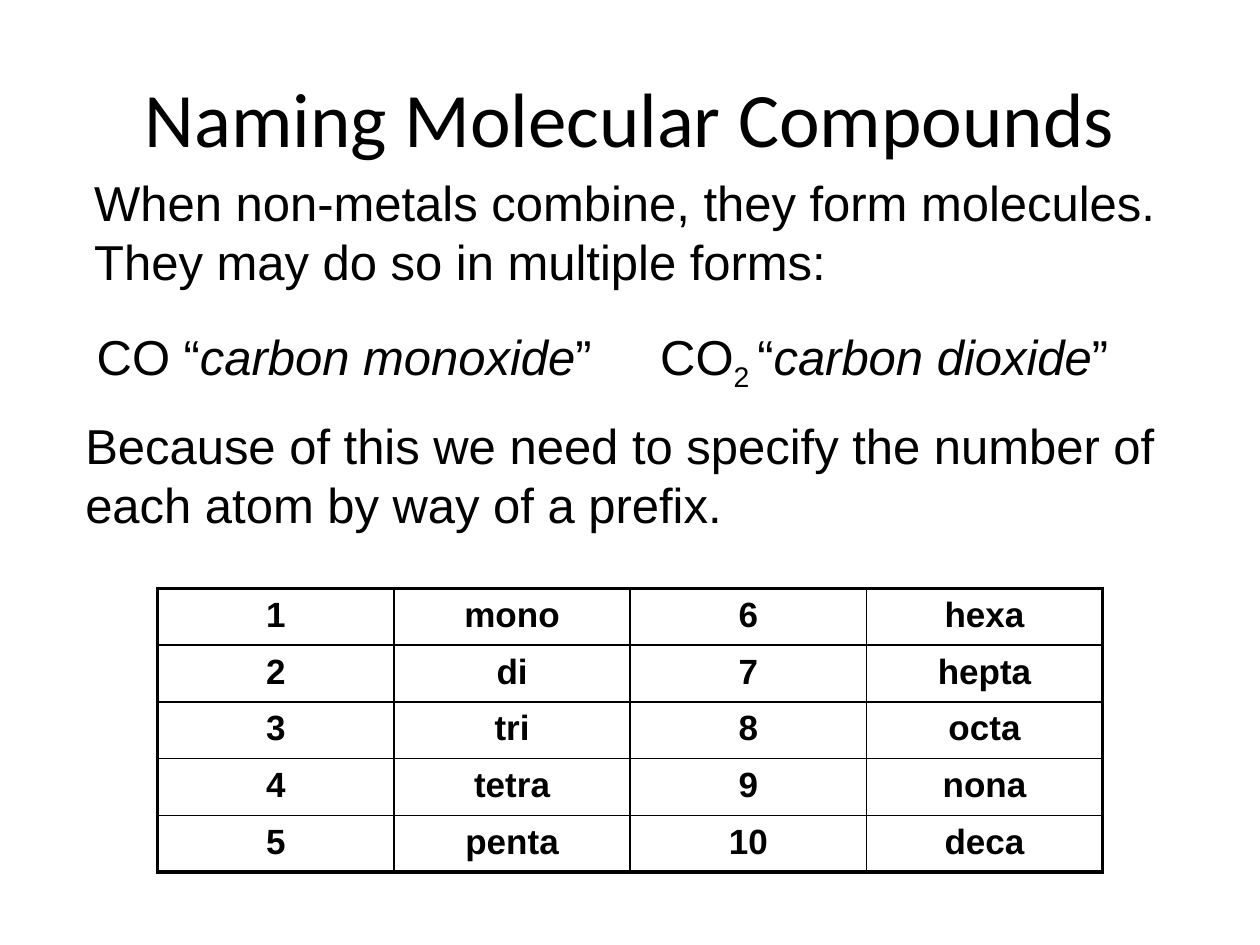
import pptx
import pptx.dml.color
import pptx.enum.text
import pptx.oxml.ns
import pptx.util
from lxml import etree
from pptx.util import Cm

BLACK = "000000"
CENTER = pptx.enum.text.PP_ALIGN.CENTER
MIDDLE = pptx.enum.text.MSO_ANCHOR.MIDDLE


def color(hex_string):
    return pptx.dml.color.RGBColor.from_string(hex_string)


def write_text(frame, paragraphs, size=28, font="Arial", bold=False, alignment=None):
    """Fill a text frame; each paragraph is a list of (text, style) runs."""
    for index, runs in enumerate(paragraphs):
        paragraph = frame.add_paragraph() if index else frame.paragraphs[0]
        paragraph.alignment = alignment
        for text, style in runs:
            run = paragraph.add_run()
            run.text = text
            run.font.size = pptx.util.Pt(size)
            run.font.name = font
            run.font.bold = bold
            run.font.italic = style == "italic"
            run.font.color.rgb = color(BLACK)
            if style == "subscript":
                run.font._element.set("baseline", "-25000")


presentation = pptx.Presentation()
presentation.slide_width = Cm(25.4)
presentation.slide_height = Cm(19.05)
slide = presentation.slides.add_slide(presentation.slide_layouts[6])

# Body text: left, top, width, height, wrap, paragraphs
text_boxes = [
    (1.65, 3.35, 21.97, 2.62, False, [
        [("When non-metals combine, they form molecules.", "")],
        [("They may do so in multiple forms:", "")],
    ]),
    (1.7, 6.45, 10.52, 1.45, False, [
        [("CO “", ""), ("carbon monoxide", "italic"), ("”", "")],
    ]),
    (13.06, 6.45, 9.65, 1.45, False, [
        [("CO", ""), ("2 ", "subscript"), ("“", ""), ("carbon dioxide", "italic"), ("”", "")],
    ]),
    (1.47, 8.26, 22.48, 2.62, True, [
        [("Because of this we need to specify the number of each atom by way of a prefix.", "")],
    ]),
]
for left, top, width, height, wrap, paragraphs in text_boxes:
    shape = slide.shapes.add_textbox(Cm(left), Cm(top), Cm(width), Cm(height))
    shape.text_frame.word_wrap = wrap
    shape.text_frame.auto_size = pptx.enum.text.MSO_AUTO_SIZE.SHAPE_TO_FIT_TEXT
    write_text(shape.text_frame, paragraphs)

# Prefix table: thick outer frame, thin inner lines
prefix_rows = [
    ("1", "mono", "6", "hexa"),
    ("2", "di", "7", "hepta"),
    ("3", "tri", "8", "octa"),
    ("4", "tetra", "9", "nona"),
    ("5", "penta", "10", "deca"),
]
last_row = len(prefix_rows) - 1
last_column = len(prefix_rows[0]) - 1
table = slide.shapes.add_table(
    last_row + 1, last_column + 1, Cm(3.18), Cm(11.86), Cm(19.05), Cm(5.72)
).table
table.first_row = False
table.horz_banding = False
for row_index, row in enumerate(prefix_rows):
    for column_index, text in enumerate(row):
        cell = table.cell(row_index, column_index)
        cell.vertical_anchor = MIDDLE
        write_text(cell.text_frame, [[(text, "")]], size=20, bold=True, alignment=CENTER)
        paragraph = cell.text_frame.paragraphs[0]
        paragraph.line_spacing = 0.9
        paragraph.space_before = pptx.util.Pt(6)

        outer_sides = {
            "a:lnL": column_index == 0,
            "a:lnR": column_index == last_column,
            "a:lnT": row_index == 0,
            "a:lnB": row_index == last_row,
        }
        properties = cell._tc.get_or_add_tcPr()
        for side, is_outer in outer_sides.items():
            line_width = pptx.util.Pt(2.25 if is_outer else 1)
            line = etree.SubElement(properties, pptx.oxml.ns.qn(side), w=str(line_width))
            fill = etree.SubElement(line, pptx.oxml.ns.qn("a:solidFill"))
            etree.SubElement(fill, pptx.oxml.ns.qn("a:srgbClr"), val=BLACK)
        cell.fill.background()

title = slide.shapes.add_textbox(Cm(1.27), Cm(0.76), Cm(22.86), Cm(3.18))
title.text_frame.word_wrap = True
title.text_frame.vertical_anchor = MIDDLE
write_text(title.text_frame, [[("Naming Molecular Compounds", "")]],
           size=44, font="Calibri", alignment=CENTER)

presentation.save("out.pptx")
